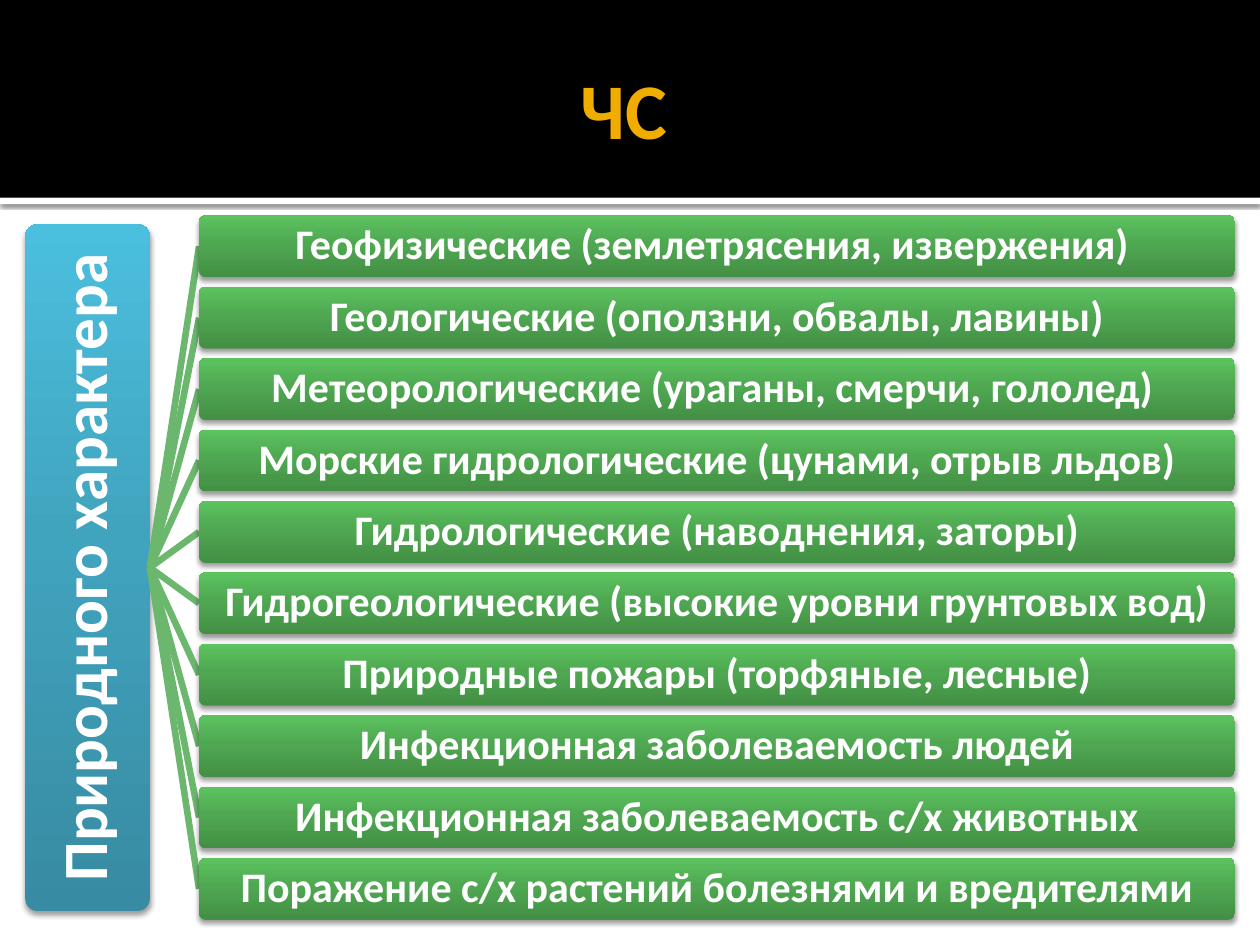
from lxml import etree
from pptx import Presentation
from pptx.dml.color import RGBColor
from pptx.enum.shapes import MSO_CONNECTOR, MSO_SHAPE
from pptx.enum.text import MSO_ANCHOR, PP_ALIGN
from pptx.oxml.ns import qn
from pptx.util import Inches, Pt

RECT, ROUNDED = MSO_SHAPE.RECTANGLE, MSO_SHAPE.ROUNDED_RECTANGLE
STRAIGHT = MSO_CONNECTOR.STRAIGHT
MIDDLE, CENTER = MSO_ANCHOR.MIDDLE, PP_ALIGN.CENTER
LEFT_SIDE, RIGHT_SIDE = 1, 3

FONT = "Calibri"
COLORS = {"black": "000000", "white": "FFFFFF", "title": "F0AD00", "branch": "6BB76D"}
BLUE = [(0, "378BA2"), (55, "41A4BF"), (100, "4BBFDE")]
GREEN = [(0, "438F45"), (55, "4FA851"), (100, "5CC35F")]

CATEGORY = "Природного характера"
HAZARDS = [
    "Геофизические (землетрясения, извержения) ",
    "Геологические (оползни, обвалы, лавины)",
    "Метеорологические (ураганы, смерчи, гололед) ",
    "Морские гидрологические (цунами, отрыв льдов)",
    "Гидрологические (наводнения, заторы)",
    "Гидрогеологические (высокие уровни грунтовых вод)",
    "Природные пожары (торфяные, лесные)",
    "Инфекционная заболеваемость людей",
    "Инфекционная заболеваемость с/х животных",
    "Поражение с/х растений болезнями и вредителями",
]
FIRST_TOP, LAST_TOP = 1.71, 6.81
PITCH = (LAST_TOP - FIRST_TOP) / (len(HAZARDS) - 1)


def add_color(parent, color):
    """Append an RGB colour element and return it."""
    return etree.SubElement(parent, qn("a:srgbClr"), val=color)


def add_shadow(shape, alpha, blur, distance):
    """Give a shape a black shadow that falls straight down."""
    shape.shadow.inherit = False
    effects = shape._element.spPr.find(qn("a:effectLst"))
    shadow = etree.SubElement(
        effects, qn("a:outerShdw"), blurRad=str(Pt(blur)), dist=str(Pt(distance)),
        dir="5400000", algn="ctr", rotWithShape="0")
    etree.SubElement(add_color(shadow, COLORS["black"]), qn("a:alpha"), val=str(alpha * 1000))


def fill_gradient(shape, stops):
    """Fill a shape with a gradient that runs from bottom to top."""
    shape.fill.gradient()
    shape.fill.gradient_angle = 90
    stop_list = shape._element.spPr.find(qn("a:gradFill")).find(qn("a:gsLst"))
    for old_stop in list(stop_list):
        stop_list.remove(old_stop)
    for position, color in stops:
        add_color(etree.SubElement(stop_list, qn("a:gs"), pos=str(position * 1000)), color)


def write_text(shape, text, size, color, insets):
    """Write one centred bold line into a shape."""
    frame = shape.text_frame
    frame.word_wrap = True
    frame.vertical_anchor = MIDDLE
    (frame.margin_left, frame.margin_top,
     frame.margin_right, frame.margin_bottom) = map(Inches, insets)
    paragraph = frame.paragraphs[0]
    paragraph.alignment = CENTER
    run = paragraph.add_run()
    run.text = text
    run.font.name, run.font.size, run.font.bold = FONT, Pt(size), True
    run.font.color.rgb = RGBColor.from_string(color)
    return paragraph


def add_band(slide, top, height, color):
    """Add a plain band across the whole slide."""
    band = slide.shapes.add_shape(RECT, 0, Inches(top), Inches(10), Inches(height))
    band.fill.solid()
    band.fill.fore_color.rgb = RGBColor.from_string(color)
    band.line.fill.background()
    band.shadow.inherit = False
    return band


def add_title(slide, text):
    """Add the slide title over the black band."""
    title = slide.shapes.add_textbox(Inches(0.5), Inches(0.17), Inches(9), Inches(1.37))
    write_text(title, text, 45, COLORS["title"], (0.1, 0.05, 0.05, 0.05))


def add_node(slide, place, stops, text, size, inset):
    """Add a rounded gradient box with its label."""
    node = slide.shapes.add_shape(ROUNDED, *map(Inches, place))
    node.adjustments[0] = 0.1
    fill_gradient(node, stops)
    node.line.fill.background()
    add_shadow(node, 38, 3.1, 2)
    label = write_text(node, text, size, COLORS["white"], [inset] * 4)
    label.line_spacing = 0.9
    return node


def add_branch(slide, category):
    """Add a line that starts at the category box."""
    branch = slide.shapes.add_connector(STRAIGHT, 0, 0, 0, 0)
    branch.line.color.rgb = RGBColor.from_string(COLORS["branch"])
    branch.line.width = Pt(3.78)
    etree.SubElement(branch._element.spPr, qn("a:effectLst"))
    branch.begin_connect(category, RIGHT_SIDE)
    return branch


def main():
    """Build the slide and save it."""
    deck = Presentation()
    deck.slide_width, deck.slide_height = Inches(10), Inches(7.5)
    slide = deck.slides.add_slide(deck.slide_layouts[6])

    divider = add_band(slide, 1.57, 0.05, COLORS["white"])
    add_shadow(divider, 60, 2.5, 0.8)
    add_band(slide, 0, 1.57, COLORS["black"])
    add_title(slide, "ЧС ")

    category = add_node(slide, (0.2, 1.78, 0.99, 5.45), BLUE, CATEGORY, 36, 0.03)
    category.text_frame._txBody.bodyPr.set("vert", "vert270")
    for index, hazard in enumerate(HAZARDS):
        branch = add_branch(slide, category)
        place = (1.58, FIRST_TOP + index * PITCH, 8.22, 0.49)
        branch.end_connect(add_node(slide, place, GREEN, hazard, 24, 0.02), LEFT_SIDE)

    deck.save("out.pptx")


if __name__ == "__main__":
    main()
